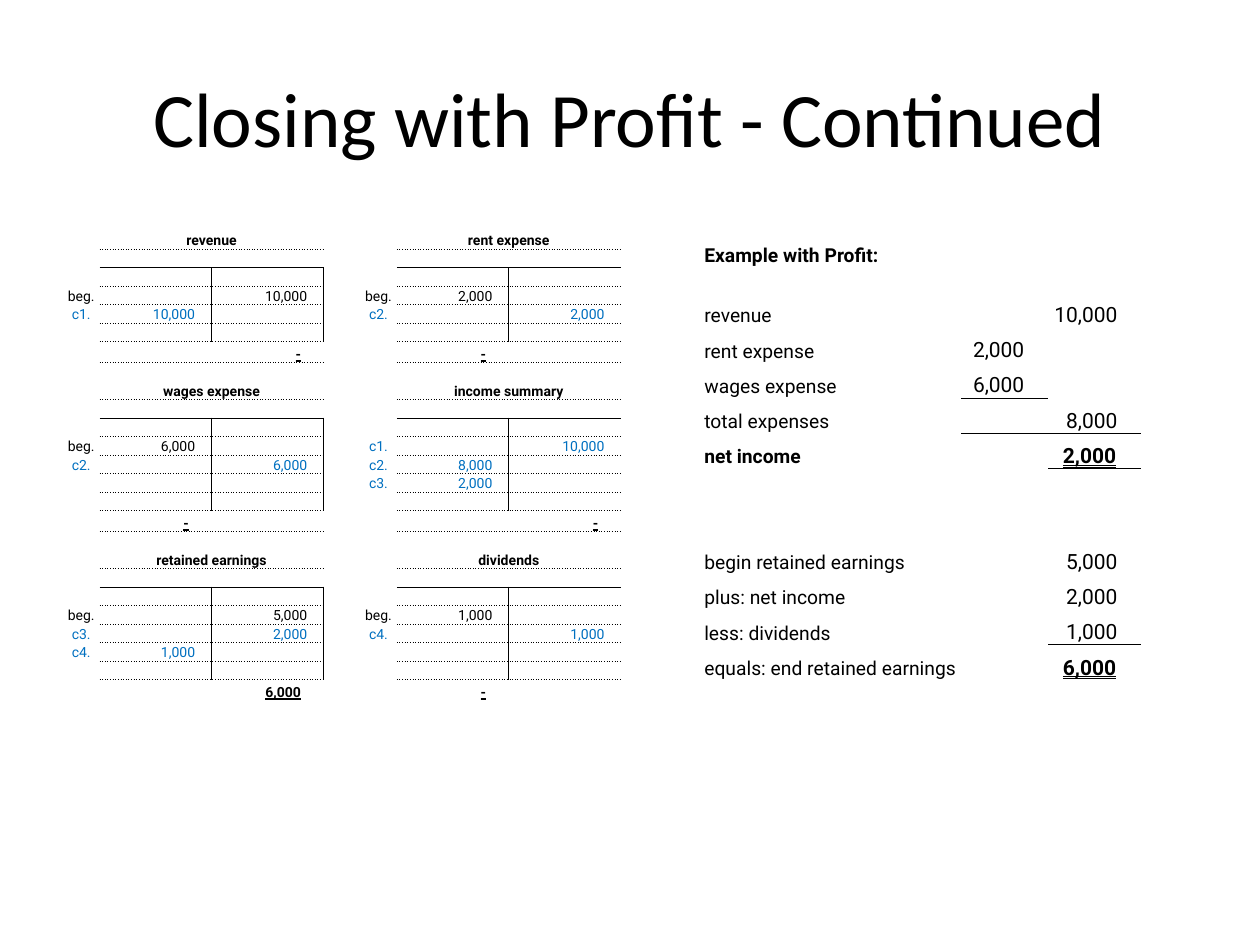
from pptx import Presentation
from pptx.dml.color import RGBColor
from pptx.enum.text import MSO_ANCHOR as Anchor, MSO_UNDERLINE as Line, PP_ALIGN as Align
from pptx.oxml.xmlchemy import OxmlElement as Node
from pptx.util import Inches, Pt

BLACK = RGBColor(0x00, 0x00, 0x00)
BLUE = RGBColor(0x00, 0x70, 0xC0)
PLAIN = "{2D5ABB26-0587-4C30-8999-92F81FD0307C}"  # "No Style, No Grid"
SOLID, DOT = "solid", "sysDot"

# Each band holds two accounts: (name, entries, side of the balance, balance).
# An entry is (reference, debit, credit).
BANDS = [
    [("revenue", [("beg.", "", "10,000"), ("c1.", "10,000", "")], 1, "-"),
     ("rent expense", [("beg.", "2,000", ""), ("c2.", "", "2,000")], 0, "-")],
    [("wages expense", [("beg.", "6,000", ""), ("c2.", "", "6,000")], 0, "-"),
     ("income summary", [("c1.", "", "10,000"), ("c2.", "8,000", ""),
                         ("c3.", "2,000", "")], 1, "-")],
    [("retained earnings", [("beg.", "", "5,000"), ("c3.", "", "2,000"),
                            ("c4.", "1,000", "")], 1, "6,000"),
     ("dividends", [("beg.", "1,000", ""), ("c4.", "", "1,000")], 0, "-")],
]

# (label, column of the amount, amount, style)
REPORT = [
    ("Example with Profit:", 0, "", "bold"),
    ("", 0, "", ""),
    ("revenue", 2, "10,000", ""),
    ("rent expense", 1, "2,000", ""),
    ("wages expense", 1, "6,000", "ruled"),
    ("total expenses", 2, "8,000", "ruled"),
    ("net income", 2, "2,000", "bold total"),
    ("", 0, "", ""),
    ("", 0, "", ""),
    ("begin retained earnings", 2, "5,000", ""),
    ("plus: net income", 2, "2,000", ""),
    ("less: dividends", 2, "1,000", "ruled"),
    ("equals: end retained earnings", 2, "6,000", "total"),
]


class Deck:
    font = "Roboto"

    def __init__(self):
        self.prs = Presentation()
        self.prs.slide_width, self.prs.slide_height = Inches(10), Inches(7.5)
        self.slide = self.prs.slides.add_slide(self.prs.slide_layouts[5])

    def title(self, text):
        box = self.slide.shapes.title
        box.left, box.top = Inches(0.5), Inches(0.3)
        box.width, box.height = Inches(9), Inches(1.25)
        box.text_frame.vertical_anchor = Anchor.MIDDLE
        para = box.text_frame.paragraphs[0]
        para.alignment = Align.CENTER
        run = para.add_run()
        run.text = text
        run.font.name, run.font.size = "Calibri", Pt(44)
        run.font.color.rgb = BLACK

    def table(self, left, top, cols, rows, size):
        """Add an unstyled table whose empty cells keep the given text size."""
        frame = self.slide.shapes.add_table(
            len(rows), len(cols), Inches(left), Inches(top),
            Inches(sum(cols)), sum(rows))
        grid = frame.table
        grid.first_row = grid.horz_banding = False
        grid._tbl.tblPr[0].text = PLAIN
        for col, width in zip(grid.columns, cols):
            col.width = Inches(width)
        for row, height in zip(grid.rows, rows):
            row.height = height
        for cell in grid.iter_cells():
            cell.fill.background()
            cell.margin_left = cell.margin_right = cell.margin_top = Inches(0.01)
            cell.margin_bottom = 0
            cell.vertical_anchor = Anchor.BOTTOM
            end = Node("a:endParaRPr")
            end.set("sz", str(size * 100))
            cell.text_frame.paragraphs[0]._p.append(end)
        return grid

    def text(self, cell, text, size, color=BLACK, bold=False, align=Align.LEFT, pad=0.01):
        cell.margin_right = Inches(pad)
        para = cell.text_frame.paragraphs[0]
        para.alignment = align
        run = para.add_run()
        run.text = text
        font = run.font
        font.name, font.size, font.bold = self.font, Pt(size), bold
        font.color.rgb = color
        return run

    def total(self, cell, text, size, stop):
        """Bold amount, double underlined from the cell's left edge to a tab stop."""
        run = self.text(cell, "\t" + text, size, bold=True)
        run.font.underline = Line.DOUBLE_LINE
        tabs, tab = Node("a:tabLst"), Node("a:tab")
        tab.set("pos", str(Inches(stop)))
        tab.set("algn", "r")
        tabs.append(tab)
        cell.text_frame.paragraphs[0]._p.get_or_add_pPr().append(tabs)

    def edges(self, cell, **dashes):
        """Draw borders; sides are L, R, T, B and values are dash names."""
        props = cell._tc.get_or_add_tcPr()
        sides = [side for side in "LRTB" if side in dashes]
        for spot, side in enumerate(sides):
            line = Node("a:ln" + side)
            line.set("w", str(Pt(0.5)))
            fill, color, dash = Node("a:solidFill"), Node("a:srgbClr"), Node("a:prstDash")
            color.set("val", str(BLACK))
            dash.set("val", dashes[side])
            fill.append(color)
            line.append(fill)
            line.append(dash)
            props.insert(spot, line)

    def account(self, grid, top, left, depth, name, entries, side, sum_):
        """Fill one T-account; depth counts its entry rows with the blank one."""
        size = 8
        debit, credit = left + 1, left + 2
        last = top + 3 + depth
        head = grid.cell(top, debit)
        head.merge(grid.cell(top, credit))
        self.text(head, name, size, bold=True, align=Align.CENTER)
        for col, stem in ((debit, "R"), (credit, "L")):
            self.edges(grid.cell(top, col), B=DOT)
            self.edges(grid.cell(top + 1, col), T=DOT, B=SOLID)
            for row in range(top + 2, last):
                upper = SOLID if row == top + 2 else DOT
                self.edges(grid.cell(row, col), T=upper, B=DOT, **{stem: SOLID})
            self.edges(grid.cell(last, col), T=DOT)
        for row, (ref, *sums) in enumerate(entries, top + 3):
            color = BLUE if ref.startswith("c") else BLACK
            self.text(grid.cell(row, left), ref, size, color, align=Align.CENTER)
            for col, value in enumerate(sums, debit):
                if value:
                    self.text(grid.cell(row, col), value, size, color,
                              align=Align.RIGHT, pad=0.13)
        self.total(grid.cell(last, debit + side), sum_, size, 0.7)

    def ledger(self, bands):
        depths = [max(len(acct[1]) for acct in band) + 1 for band in bands]
        line, foot = Pt(10), Pt(12)
        rows = []
        for depth in depths:
            rows += [line] * (depth + 3) + [foot, line]
        rows.pop()
        grid = self.table(0.5, 1.83, [0.29, 0.89, 0.89, 0.29, 0.29, 0.89, 0.89], rows, 8)
        top = 0
        for band, depth in zip(bands, depths):
            for left, acct in zip((0, 4), band):
                self.account(grid, top, left, depth, *acct)
            top += depth + 5

    def report(self, lines):
        rows = [Inches(0.2), Inches(0.18)] + [Inches(0.28)] * (len(lines) - 2)
        grid = self.table(5.58, 1.92, [2.05, 0.69, 0.74], rows, 11)
        for row, (label, col, value, style) in enumerate(lines):
            if label:
                self.text(grid.cell(row, 0), label, 11, bold="bold" in style)
            if "total" in style:
                self.total(grid.cell(row, col), value, 12, 0.53)
            elif value:
                self.text(grid.cell(row, col), value, 12, align=Align.RIGHT, pad=0.19)
            if "ruled" in style:
                self.edges(grid.cell(row, col), B=SOLID)
                self.edges(grid.cell(row + 1, col), T=SOLID)


def main():
    deck = Deck()
    deck.title("Closing with Profit - Continued")
    deck.ledger(BANDS)
    deck.report(REPORT)
    deck.prs.save("out.pptx")


if __name__ == "__main__":
    main()
